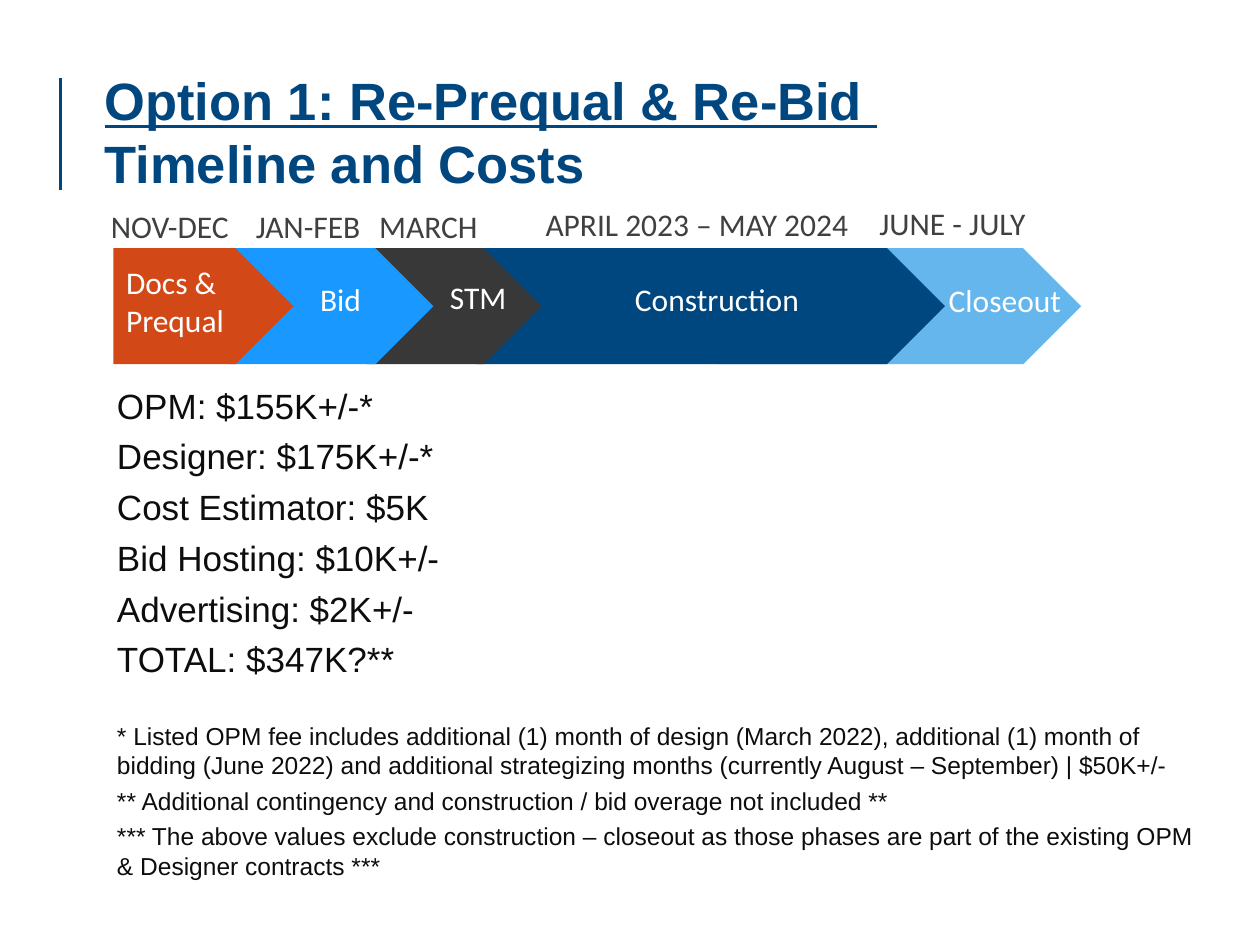
from copy import deepcopy
from dataclasses import dataclass

from pptx import Presentation
from pptx.dml.color import RGBColor
from pptx.enum.shapes import MSO_CONNECTOR as Connector, MSO_SHAPE as Preset
from pptx.enum.text import MSO_ANCHOR as Anchor, MSO_AUTO_SIZE as AutoSize, PP_ALIGN as Align
from pptx.oxml.ns import qn
from pptx.util import Inches, Pt

COLUMNS, ROWS = 100, 75
SLIDE_WIDTH, SLIDE_HEIGHT = Inches(10), Inches(7.5)
NAVY, WHITE, GREY, INK = "00467F", "FFFFFF", "404040", "0D0D0D"
BAND_TOP, BAND_HEIGHT = 19.7, 9.2


@dataclass
class Label:
    text: str
    left: float
    top: float
    width: float


@dataclass
class Phase:
    left: float
    width: float
    fill: str
    name: Label
    period: Label


PHASES = [
    Phase(9, 14.3, "D34817", Label("Docs & Prequal", 8.4, 20.4, 17.2), Label("NOV-DEC", 7.2, 15.9, 12.6)),
    Phase(18.1, 16.3, "1998FF", Label("Bid", 23.8, 21.7, 7.2), Label("JAN-FEB", 18.7, 15.9, 11.1)),
    Phase(29.1, 13.9, "383838", Label("STM", 34.1, 21.6, 8.2), Label("MARCH", 28.5, 15.9, 11.6)),
    Phase(37.8, 37.2, NAVY, Label("Construction", 48.8, 21.7, 16.6),
          Label("APRIL 2023 – MAY 2024", 41.7, 15.8, 27.7)),
    Phase(56.9, 28.9, "64B6EC", Label("Closeout", 73.7, 21.8, 12.7), Label("JUNE - JULY", 68.2, 15.7, 15.2)),
]

COSTS = [
    "OPM: $155K+/-*",
    "Designer: $175K+/-*",
    "Cost Estimator: $5K",
    "Bid Hosting: $10K+/-",
    "Advertising: $2K+/-",
    "TOTAL: $347K?**",
]
NOTES = [
    "* Listed OPM fee includes additional (1) month of design (March 2022), additional (1) month of "
    "bidding (June 2022) and additional strategizing months (currently August – September) | $50K+/-",
    "** Additional contingency and construction / bid overage not included **",
    "*** The above values exclude construction – closeout as those phases are part of the existing OPM "
    "& Designer contracts ***",
]


def rgb(color: str) -> RGBColor:
    return RGBColor.from_string(color)


def x(columns: float) -> int:
    return round(SLIDE_WIDTH * columns / COLUMNS)


def y(rows: float) -> int:
    return round(SLIDE_HEIGHT * rows / ROWS)


def style(font, face: str, size: float, color: str) -> None:
    font.name, font.size = face, Pt(size)
    font.color.rgb = rgb(color)


def add_rule(slide) -> None:
    rule = slide.shapes.add_connector(Connector.STRAIGHT, x(4.8), y(6.2), x(4.8), y(15.1))
    rule.line.color.rgb = rgb(NAVY)
    rule.line.width = Pt(2)
    properties = rule._element.spPr
    properties.append(properties.makeelement(qn("a:effectLst"), {}))


def set_title(slide) -> None:
    title = slide.shapes.title
    title.left, title.top, title.width, title.height = x(8.3), y(7.5), x(90), y(5.8)
    frame = title.text_frame
    frame.text = "Option 1: Re-Prequal & Re-Bid \vTimeline and Costs"
    frame.auto_size = AutoSize.NONE
    frame.vertical_anchor = Anchor.MIDDLE
    frame.margin_left = frame.margin_right = frame.margin_top = frame.margin_bottom = 0
    paragraph = frame.paragraphs[0]
    paragraph.alignment = Align.LEFT
    for run in paragraph.runs:
        style(run.font, "Arial", 30, NAVY)
        run.font.bold = True
    paragraph.runs[0].font.underline = True
    # The line break needs the title's size, or it stretches the first line
    line_break = paragraph._p.find(qn("a:br"))
    line_break.insert(0, deepcopy(paragraph.runs[1]._r.rPr))


def add_arrow(slide, phase: Phase) -> None:
    arrow = slide.shapes.add_shape(
        Preset.PENTAGON, x(phase.left), y(BAND_TOP), x(phase.width), y(BAND_HEIGHT))
    arrow.shadow.inherit = False
    arrow.fill.solid()
    arrow.fill.fore_color.rgb = rgb(phase.fill)
    arrow.line.fill.background()


def add_label(slide, label: Label, color: str) -> None:
    box = slide.shapes.add_textbox(x(label.left), y(label.top), x(label.width), y(4))
    frame = box.text_frame
    frame.word_wrap = True
    frame.margin_left = Inches(0.16)
    frame.text = label.text
    style(frame.paragraphs[0].runs[0].font, "Calibri", 18, color)


def add_costs(slide) -> None:
    frame = slide.shapes.add_textbox(x(8.3), y(30), x(89.2), y(41)).text_frame
    frame.word_wrap = True
    frame.text = "\n".join(COSTS + NOTES)
    for index, paragraph in enumerate(frame.paragraphs):
        is_cost = index < len(COSTS)
        style(paragraph.runs[0].font, "Arial", 20 if is_cost else 14, INK)
        if index:
            paragraph.space_before = Pt(5 if is_cost else 3.5)
    frame.paragraphs[len(COSTS)].space_before = Pt(23.5)


def main() -> None:
    deck = Presentation()
    deck.slide_width, deck.slide_height = SLIDE_WIDTH, SLIDE_HEIGHT
    slide = deck.slides.add_slide(deck.slide_layouts.get_by_name("Title Only"))
    add_rule(slide)
    set_title(slide)
    add_costs(slide)
    for phase in reversed(PHASES):
        add_arrow(slide, phase)
    for phase in PHASES:
        add_label(slide, phase.period, GREY)
        add_label(slide, phase.name, WHITE)
    deck.save("out.pptx")


if __name__ == "__main__":
    main()
